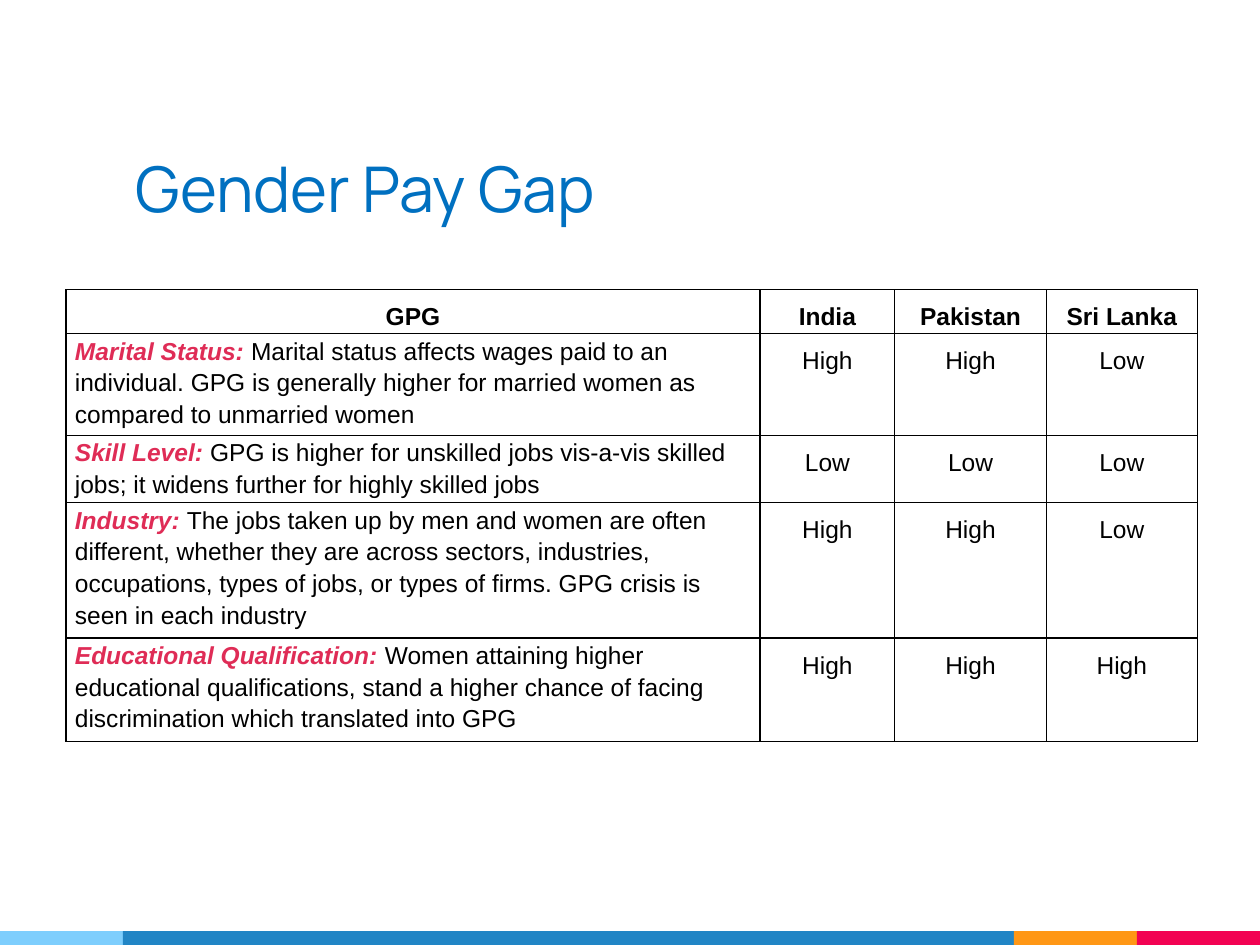
import pptx
import pptx.dml.color
import pptx.enum.shapes
import pptx.enum.text
import pptx.oxml
import pptx.oxml.ns
import pptx.util

Cm = pptx.util.Cm
Pt = pptx.util.Pt
ALIGN = pptx.enum.text.PP_ALIGN

COLORS = {
    "title": "0070C0",
    "text": "000000",
    "topic": "DF2C56",
    "border": "000000",
    "sky": "7ECEFD",
    "blue": "2185C5",
    "orange": "FF9715",
    "red": "F20253",
}

STRIPES = [("sky", 2.48), ("blue", 17.96), ("orange", 2.48), ("red", 2.48)]
COLUMN_WIDTHS = [13.99, 2.72, 3.05, 3.05]
ROW_HEIGHTS = [0.79, 2.03, 1.35, 2.72, 2.08]
HEADINGS = ["GPG", "India", "Pakistan", "Sri Lanka"]
FACTORS = [
    ("Marital Status: ",
     "Marital status affects wages paid to an individual. GPG is generally "
     "higher for married women as compared to unmarried women",
     ["High", "High", "Low"]),
    ("Skill Level: ",
     "GPG is higher for unskilled jobs vis-a-vis skilled jobs; it widens "
     "further for highly skilled jobs",
     ["Low", "Low", "Low"]),
    ("Industry: ",
     "The jobs taken up by men and women are often different, whether they "
     "are across sectors, industries, occupations, types of jobs, or types "
     "of firms. GPG crisis is seen in each industry",
     ["High", "High", "Low"]),
    ("Educational Qualification: ",
     "Women attaining higher educational qualifications, stand a higher "
     "chance of facing discrimination which translated into GPG",
     ["High", "High", "High"]),
]


def rgb(name):
    return pptx.dml.color.RGBColor.from_string(COLORS[name])


def add_span(para, text, size=14, font="Arial", color="text",
             bold=False, italic=False):
    span = para.add_run()
    span.text = text
    span.font.size = Pt(size)
    span.font.name = font
    span.font.color.rgb = rgb(color)
    span.font.bold = bold
    span.font.italic = italic


def add_stripes(page, left, top, height):
    for color, width in STRIPES:
        stripe = page.shapes.add_shape(
            pptx.enum.shapes.MSO_SHAPE.RECTANGLE,
            Cm(left), Cm(top), Cm(width), Cm(height))
        stripe.shadow.inherit = False
        stripe.fill.solid()
        stripe.fill.fore_color.rgb = rgb(color)
        stripe.line.fill.background()
        left += width


def add_title(page, left, top, width, height):
    box = page.shapes.add_textbox(Cm(left), Cm(top), Cm(width), Cm(height))
    frame = box.text_frame
    frame.word_wrap = True
    frame.vertical_anchor = pptx.enum.text.MSO_ANCHOR.BOTTOM
    frame.margin_left = frame.margin_right = Cm(0.25)
    frame.margin_top = frame.margin_bottom = Cm(0.25)
    add_span(frame.paragraphs[0], "Gender Pay Gap", 36, "Manrope", "title")


def style_cell(cell):
    cell.margin_left = cell.margin_right = Cm(0.18)
    cell.margin_top = cell.margin_bottom = 0
    properties = cell._tc.get_or_add_tcPr()
    for side in ("lnL", "lnR", "lnT", "lnB"):
        properties.append(pptx.oxml.parse_xml(
            f'<a:{side} {pptx.oxml.ns.nsdecls("a")} w="{Pt(0.75)}">'
            f'<a:solidFill><a:srgbClr val="{COLORS["border"]}"/></a:solidFill>'
            f'</a:{side}>'))
    cell.fill.background()


def start_para(cell, align, spacing):
    style_cell(cell)
    para = cell.text_frame.paragraphs[0]
    para.alignment = align
    para.line_spacing = spacing
    return para


def add_gap_table(page, left, top):
    table = page.shapes.add_table(
        len(ROW_HEIGHTS), len(COLUMN_WIDTHS), Cm(left), Cm(top),
        Cm(sum(COLUMN_WIDTHS)), Cm(sum(ROW_HEIGHTS))).table
    table.first_row = False
    table.horz_banding = False
    for column, width in zip(table.columns, COLUMN_WIDTHS):
        column.width = Cm(width)
    for row, height in zip(table.rows, ROW_HEIGHTS):
        row.height = Cm(height)

    # Heading row
    for column, heading in enumerate(HEADINGS):
        para = start_para(table.cell(0, column), ALIGN.CENTER, 1.5)
        add_span(para, heading, bold=True)

    # One row per factor: description, then a level for each country
    for row, (topic, description, levels) in enumerate(FACTORS, 1):
        para = start_para(table.cell(row, 0), ALIGN.LEFT, 1.15)
        add_span(para, topic, color="topic", bold=True, italic=True)
        add_span(para, description)
        for column, level in enumerate(levels, 1):
            para = start_para(table.cell(row, column), ALIGN.CENTER, 1.5)
            add_span(para, level)


def main():
    deck = pptx.Presentation()
    deck.slide_width = Cm(25.4)
    deck.slide_height = Cm(19.05)
    page = deck.slides.add_slide(deck.slide_layouts[6])
    add_stripes(page, 0, 18.77, 0.28)
    add_title(page, 2.49, 1.6, 21.18, 3.18)
    add_gap_table(page, 1.33, 5.84)
    deck.save("out.pptx")


if __name__ == "__main__":
    main()
